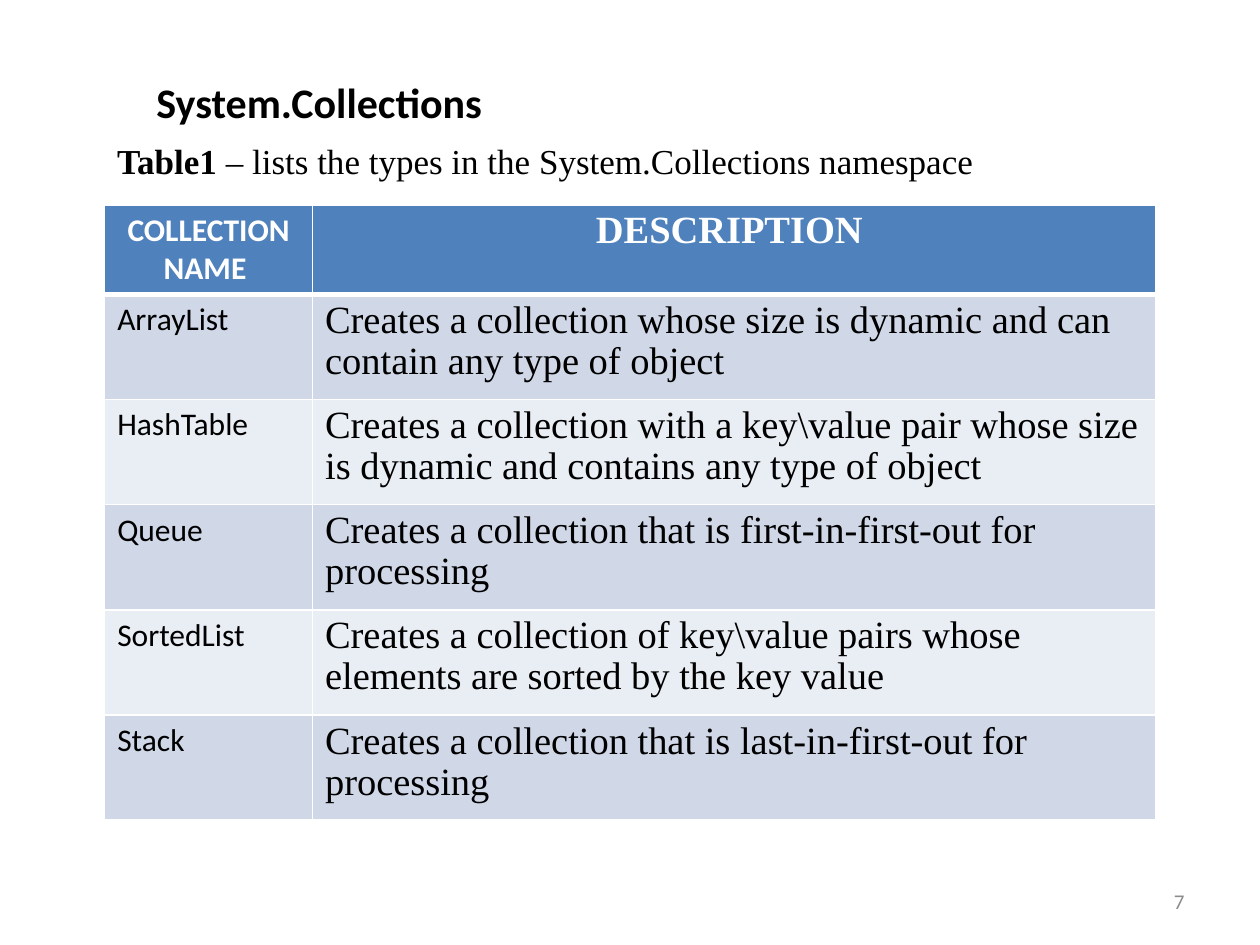
from pptx import Presentation
from pptx.dml.color import RGBColor
from pptx.enum.text import MSO_ANCHOR as Anchor, MSO_AUTO_SIZE as Fit, PP_ALIGN as Align
from pptx.oxml import parse_xml
from pptx.oxml.ns import nsdecls
from pptx.util import Cm, Pt

SANS, SERIF = "Calibri", "Times New Roman"
BLACK, WHITE, GREY = "000000", "FFFFFF", "8C8C8C"
HEAD, BANDS = "4F81BD", ("D0D8E8", "E9EDF4")

TITLE = "System.Collections"
LABEL, CAPTION = "Table1 ", "– lists the types in the System.Collections namespace"
NUMBER = "7"
ROWS = [
    ("COLLECTION NAME ", "DESCRIPTION "),
    ("ArrayList", "Creates a collection whose size is dynamic and can contain any type of object"),
    ("HashTable", "Creates a collection with a key\\value pair whose size is dynamic and contains any type of object"),
    ("Queue", "Creates a collection that is first-in-first-out for processing"),
    ("SortedList", "Creates a collection of key\\value pairs whose elements are sorted by the key value"),
    ("Stack", "Creates a collection that is last-in-first-out for processing"),
]
FONTS = ((SANS, 18, 1.0), (SERIF, 22, 0.96))
WIDTHS = (4.19, 17.0)
HEAD_H, ROW_H = 1.77, 2.12
LEFT, WIDE = 2.11, 21.2


def tint(code):
    return RGBColor.from_string(code)


def write(frame, text, font=SANS, size=18, color=BLACK, bold=False,
          align=Align.LEFT, space=1.0):
    para = frame.paragraphs[0]
    para.alignment = align
    para.line_spacing = space
    run = para.add_run()
    run.text = text
    run.font.name = font
    run.font.size = Pt(size)
    run.font.bold = bold
    run.font.color.rgb = tint(color)


def place(shape, left, top, width, height, anchor=Anchor.TOP):
    shape.left, shape.top = Cm(left), Cm(top)
    shape.width, shape.height = Cm(width), Cm(height)
    frame = shape.text_frame
    frame.word_wrap = True
    frame.auto_size = Fit.NONE
    frame.vertical_anchor = anchor
    return frame


def add_box(slide, *spot, **look):
    return place(slide.shapes.add_textbox(0, 0, 0, 0), *spot, **look)


def edge(cell, base):
    props = cell._tc.get_or_add_tcPr()
    for i, (side, width) in enumerate((("L", 1), ("R", 1), ("T", 1), ("B", base))):
        props.insert(i, parse_xml(
            f'<a:ln{side} {nsdecls("a")} w="{Pt(width)}"><a:solidFill>'
            f'<a:srgbClr val="{WHITE}"/></a:solidFill></a:ln{side}>'))


def add_grid(slide):
    tall = HEAD_H + ROW_H * (len(ROWS) - 1)
    grid = slide.shapes.add_table(len(ROWS), len(WIDTHS), Cm(LEFT), Cm(4.13),
                                  Cm(sum(WIDTHS)), Cm(tall)).table
    for col, width in zip(grid.columns, WIDTHS):
        col.width = Cm(width)
    for r, texts in enumerate(ROWS):
        head = r == 0
        grid.rows[r].height = Cm(HEAD_H if head else ROW_H)
        for c, (text, (font, size, space)) in enumerate(zip(texts, FONTS)):
            cell = grid.cell(r, c)
            cell.fill.solid()
            cell.fill.fore_color.rgb = tint(HEAD if head else BANDS[(r - 1) % 2])
            edge(cell, 3 if head else 1)
            write(cell.text_frame, text, font=font, size=size, bold=head, space=space,
                  color=WHITE if head else BLACK,
                  align=Align.CENTER if head else Align.LEFT)


def main():
    deck = Presentation()
    deck.slide_width, deck.slide_height = Cm(25.4), Cm(19.05)
    slide = deck.slides.add_slide(deck.slide_layouts[5])
    write(place(slide.shapes.title, 2.9, 1.42, 9.8, 1.27), TITLE, size=24, bold=True)
    add_grid(slide)
    note = add_box(slide, LEFT, 2.69, WIDE, 1.12)
    write(note, LABEL, font=SERIF, size=20, bold=True)
    write(note, CAPTION, font=SERIF, size=20)
    foot = add_box(slide, 18.2, 17.65, 5.93, 1.02, anchor=Anchor.MIDDLE)
    write(foot, NUMBER, size=12, color=GREY, align=Align.RIGHT)
    deck.save("out.pptx")


if __name__ == "__main__":
    main()
